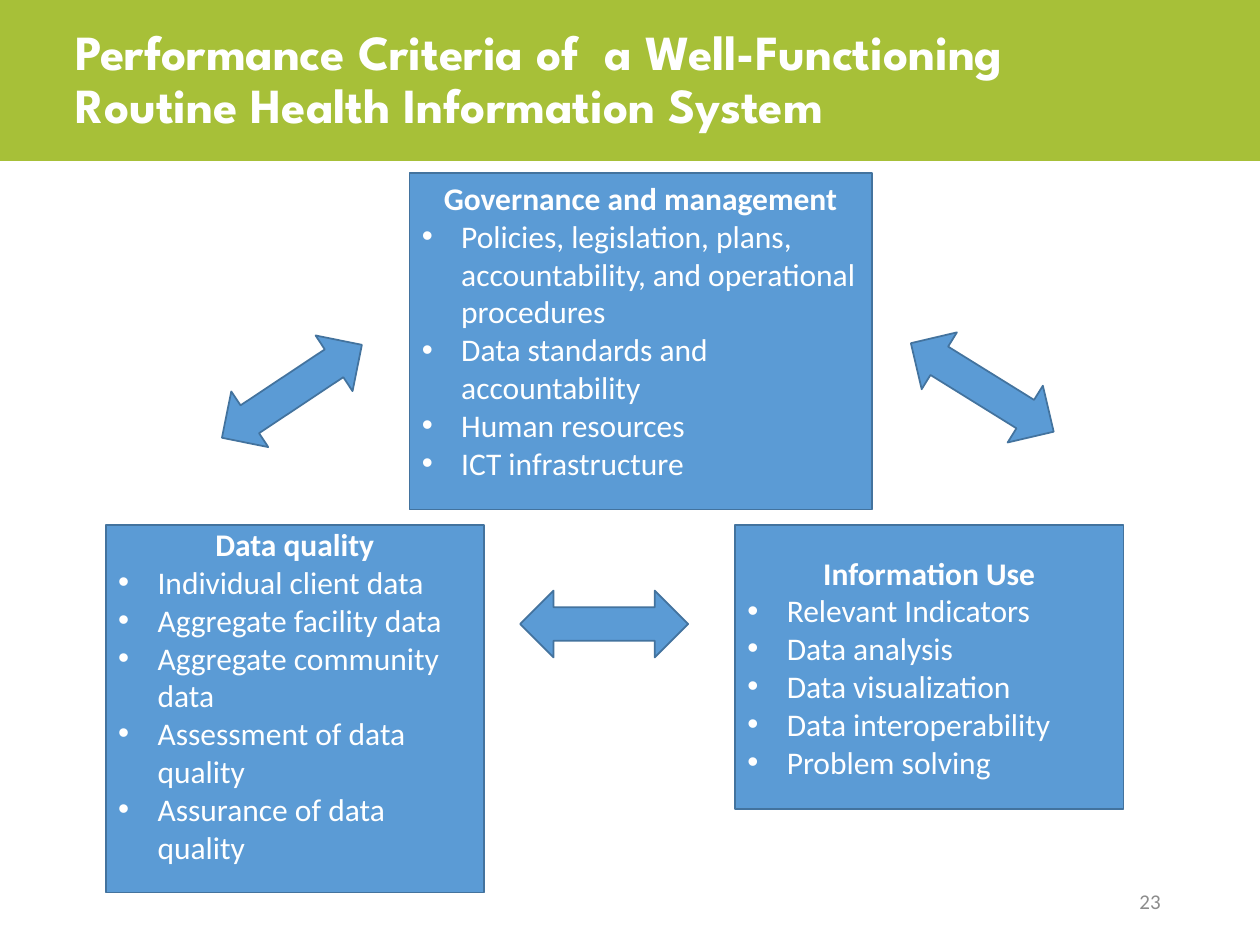
from pptx import Presentation
from pptx import util as u
from pptx.dml.color import RGBColor
from pptx.enum import shapes, text
from pptx.oxml.ns import qn
from lxml import etree

Pt = u.Pt
S = shapes.MSO_SHAPE
A = text.MSO_ANCHOR
AL = text.PP_ALIGN


def paint(sp, fill, line=None):
    sp.shadow.inherit = False
    sp.fill.solid()
    sp.fill.fore_color.rgb = RGBColor.from_string(fill)
    if line:
        sp.line.color.rgb = RGBColor.from_string(line)
        sp.line.width = Pt(1)
    else:
        sp.line.fill.background()


def write(p, words, align, color="FFFFFF", **fmt):
    p.alignment = align
    r = p.add_run()
    r.text = words
    for key, value in {"name": "Calibri", "size": Pt(18), "bold": False, **fmt}.items():
        setattr(r.font, key, value)
    r.font.color.rgb = RGBColor.from_string(color)


prs = Presentation()
prs.slide_width, prs.slide_height = Pt(720), Pt(540)
s = prs.slides.add_slide(prs.slide_layouts[6])

band = s.shapes.add_shape(S.RECTANGLE, Pt(-10), Pt(-12.4), Pt(739.6), Pt(104.4))
paint(band, "A7C038")

labels = [
    ((36, -5.8, 622.8, 104.4), "Performance Criteria of  a Well-Functioning Routine Health Information System",
     AL.LEFT, "FFFFFF", {"name": "League Spartan", "size": Pt(28), "bold": True}),
    ((508.3, 500.4, 162, 28.8), "23", AL.RIGHT, "8C8C8C", {"size": Pt(12)}),
]
for box, words, align, color, fmt in labels:
    tf = s.shapes.add_textbox(*map(Pt, box)).text_frame
    tf.word_wrap = True
    tf.vertical_anchor = A.MIDDLE
    p = tf.paragraphs[0]
    if align == AL.LEFT:
        p.line_spacing = 0.9
    write(p, words, align, color, **fmt)

cards = [
    ((234, 98.8, 264.2, 192.4), A.TOP, 3.6, "Governance and management",
     ["Policies, legislation, plans, accountability, and operational procedures",
      "Data standards and accountability", "Human resources", "ICT infrastructure"]),
    ((60.5, 300.1, 216, 210), A.TOP, 0, "Data quality",
     ["Individual client data", "Aggregate facility data", "Aggregate community data",
      "Assessment of data quality", "Assurance of data quality"]),
    ((420, 300.1, 222, 162), A.MIDDLE, 3.6, "Information Use",
     ["Relevant Indicators", "Data analysis", "Data visualization",
      "Data interoperability", "Problem solving"]),
]
for box, anchor, top, heading, items in cards:
    sp = s.shapes.add_shape(S.RECTANGLE, *map(Pt, box))
    paint(sp, "5B9BD5", "43739E")
    tf = sp.text_frame
    for key, value in {"word_wrap": True, "vertical_anchor": anchor, "margin_top": Pt(top)}.items():
        setattr(tf, key, value)
    write(tf.paragraphs[0], heading, AL.CENTER, bold=True)
    for item in items:
        p = tf.add_paragraph()
        write(p, item, AL.LEFT)
        pPr = p._p.get_or_add_pPr()
        pPr.set("marL", str(Pt(22.5)))
        pPr.set("indent", str(-Pt(22.5)))
        etree.SubElement(pPr, qn("a:buFont")).set("typeface", "Arial")
        etree.SubElement(pPr, qn("a:buChar")).set("char", "•")

for left, top, angle in [(297.2, 337.5, 0), (118.8, 204.5, 326.4), (513.3, 202.3, 31.8)]:
    sp = s.shapes.add_shape(S.LEFT_RIGHT_ARROW, Pt(left), Pt(top), Pt(96), Pt(38.2))
    paint(sp, "5B9BD5", "43739E")
    sp.rotation = angle

prs.save("out.pptx")
